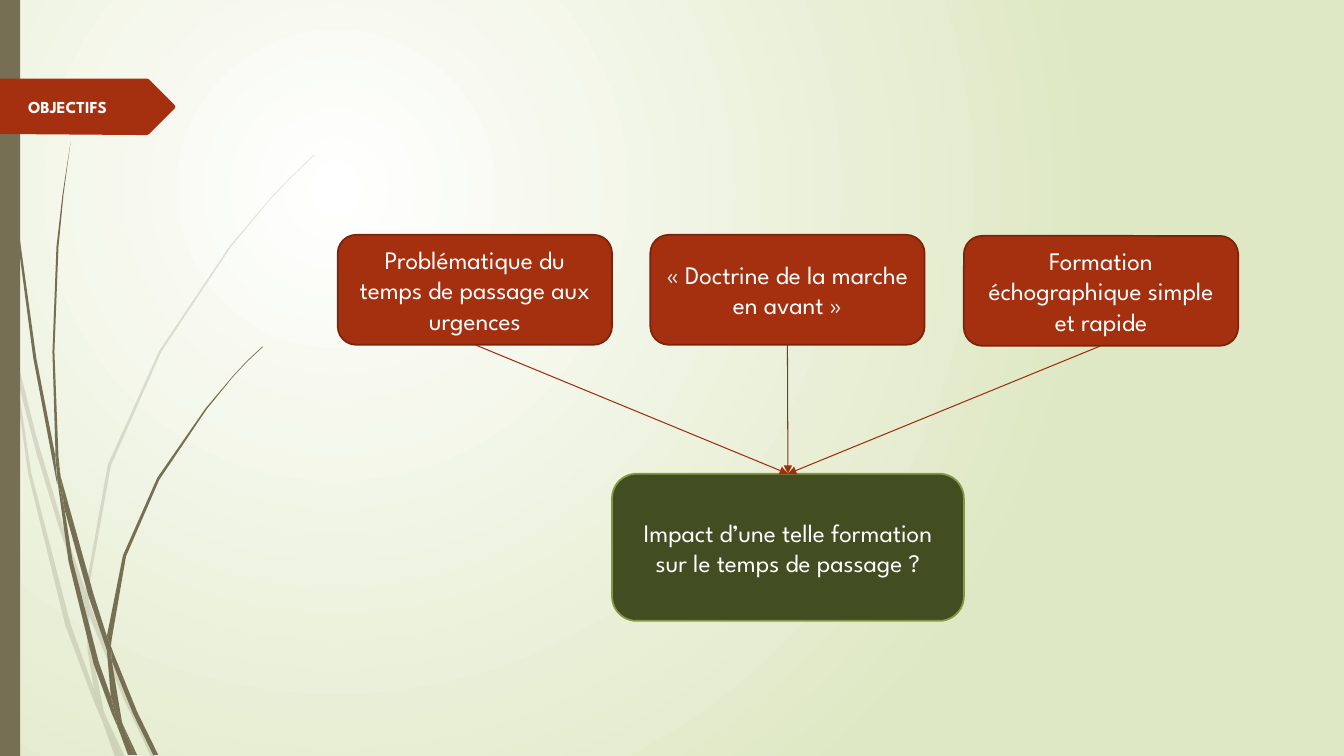
from dataclasses import dataclass

from pptx import Presentation
from pptx.dml.color import RGBColor
from pptx.enum.shapes import MSO_CONNECTOR as Connector, MSO_SHAPE as Shape
from pptx.enum.text import MSO_ANCHOR as Anchor, PP_ALIGN as Align
from pptx.oxml import parse_xml
from pptx.oxml.ns import nsdecls, qn
from pptx.oxml.xmlchemy import OxmlElement
from pptx.shapes.autoshape import Shape as AutoShape
from pptx.slide import Slide
from pptx.util import Pt

PX = 9144  # EMU per px, 100 px to the inch
SLIDE_W, SLIDE_H = 1333, 750
FONT = "League Spartan"
COLORS = {
    "white": "FFFFFF",
    "pale_green": "DFE8C4",
    "taupe": "766F54",
    "red": "A53010",
    "dark_red": "7A240C",
    "arrow_red": "9E2E0F",
    "dark_green": "424D22",
    "green": "839943",
}
BOTTOM_SITE, TOP_SITE = 2, 0

Outline = list[tuple[int, int]]

FAINT_GRASS: list[Outline] = [
    [(11, 350), (9, 322), (0, 282), (0, 299), (10, 344)],
    [(58, 522), (84, 599), (85, 586), (62, 520), (36, 433), (14, 345), (17, 376), (36, 449)],
    [(92, 607), (88, 596), (88, 610), (123, 694), (150, 751), (155, 751), (127, 692)],
    [(119, 751), (124, 751), (105, 711)],
    [(93, 683), (70, 619), (31, 469), (17, 376), (11, 350), (28, 470), (65, 621),
     (92, 693), (101, 714), (99, 707)],
    [(84, 599), (87, 646), (93, 683), (96, 692), (105, 711), (103, 706), (91, 646),
     (88, 610), (88, 608)],
    [(88, 584), (110, 462), (160, 349), (229, 245), (268, 198), (290, 175), (312, 154),
     (312, 153), (289, 175), (268, 197), (228, 244), (158, 348), (107, 461), (85, 584),
     (85, 586), (88, 596)],
    [(101, 714), (114, 751), (119, 751)],
    [(88, 608), (88, 610), (88, 596), (85, 586), (84, 599)],
    [(96, 692), (93, 683), (99, 707), (101, 714), (119, 751), (105, 711)],
]
SOLID_GRASS: list[Outline] = [
    [(7, 110), (17, 233), (33, 355), (56, 477), (57, 481), (55, 457), (55, 453), (36, 355),
     (19, 232), (8, 109), (5, 48), (4, 0), (3, 0), (4, 48)],
    [(88, 592), (106, 645), (106, 633), (106, 631), (93, 590), (60, 472), (64, 505)],
    [(113, 649), (110, 641), (111, 656), (132, 708), (152, 749), (157, 749), (136, 706)],
    [(110, 691), (98, 657), (72, 556), (64, 505), (57, 477), (68, 557), (93, 659),
     (111, 708), (117, 722), (116, 717)],
    [(60, 472), (58, 453), (54, 349), (58, 245), (63, 193), (70, 141), (62, 193),
     (56, 245), (52, 349), (55, 449)],
    [(133, 749), (136, 749), (122, 719)],
    [(57, 477), (64, 505), (60, 472), (55, 449), (55, 453)],
    [(111, 633), (125, 552), (158, 476), (205, 406), (231, 374), (245, 359), (261, 344),
     (260, 344), (245, 358), (231, 373), (204, 405), (156, 474), (122, 551), (106, 631),
     (110, 641)],
    [(117, 722), (127, 749), (131, 749)],
    [(106, 645), (110, 691), (116, 706), (122, 719), (121, 716), (111, 656), (109, 651)],
    [(106, 645), (109, 651), (111, 656), (110, 641), (106, 631), (106, 633)],
    [(116, 706), (110, 691), (116, 717), (117, 722), (130, 749), (133, 749), (122, 719)],
]
TITLE_TAG: Outline = [
    (0, 78), (146, 78), (148, 79), (173, 104), (174, 106), (173, 108), (148, 133),
    (146, 134), (136, 134), (0, 133),
]


@dataclass(frozen=True)
class Box:
    text: str
    left: int
    top: int
    width: int = 272
    height: int = 109
    fill: str = "red"
    line: str = "dark_red"


REASONS = [
    Box("Problématique du temps de passage aux urgences", 335, 233),
    Box("« Doctrine de la marche en avant »", 645, 233),
    Box("Formation échographique simple et rapide", 956, 234),
]
QUESTION = Box("Impact d’une telle formation sur le temps de passage ?",
               607, 470, 349, 146, "dark_green", "green")


def rgb(name: str) -> RGBColor:
    return RGBColor.from_string(COLORS[name])


def paint_background(slide: Slide) -> None:
    """Radial gradient centred in the upper left quarter."""
    fill = slide.background.fill
    fill.gradient()
    for stop, position, color in zip(fill.gradient_stops, (0, 1), ("white", "pale_green")):
        stop.position = position
        stop.color.rgb = rgb(color)
    linear = slide.element.find(".//" + qn("a:lin"))
    circle = parse_xml(
        f'<a:path {nsdecls("a")} path="circle">'
        '<a:fillToRect l="50000" t="50000" r="100000" b="100000"/></a:path>')
    linear.getparent().replace(linear, circle)


def fill_plain(shape: AutoShape, color: str) -> None:
    shape.shadow.inherit = False
    shape.fill.solid()
    shape.fill.fore_color.rgb = rgb(color)
    shape.line.fill.background()


def add_outline(slide: Slide, points: Outline, color: str, opacity: int = 100) -> None:
    builder = slide.shapes.build_freeform(*points[0], scale=PX)
    builder.add_line_segments(points[1:], close=True)
    outline = builder.convert_to_shape()
    fill_plain(outline, color)
    if opacity < 100:
        alpha = OxmlElement("a:alpha")
        alpha.set("val", str(opacity * 1000))
        outline.element.spPr.find(".//" + qn("a:srgbClr")).append(alpha)


def write(shape: AutoShape, text: str, size: int, align: Align, bold: bool = False) -> None:
    shape.text_frame.word_wrap = True
    paragraph = shape.text_frame.paragraphs[0]
    paragraph.text = text
    paragraph.alignment = align
    font = paragraph.font
    font.name, font.size, font.bold = FONT, Pt(size), bold
    font.color.rgb = rgb("white")


def add_box(slide: Slide, box: Box) -> AutoShape:
    shape = slide.shapes.add_shape(Shape.ROUNDED_RECTANGLE, box.left * PX, box.top * PX,
                                   box.width * PX, box.height * PX)
    fill_plain(shape, box.fill)
    shape.line.color.rgb = rgb(box.line)
    shape.line.width = Pt(1.25)
    shape.text_frame.vertical_anchor = Anchor.MIDDLE
    write(shape, box.text, 18, Align.CENTER)
    return shape


def add_arrow(slide: Slide, source: AutoShape, target: AutoShape) -> None:
    arrow = slide.shapes.add_connector(Connector.STRAIGHT, 0, 0, 0, 0)
    arrow.begin_connect(source, BOTTOM_SITE)
    arrow.end_connect(target, TOP_SITE)
    arrow.line.color.rgb = rgb("arrow_red")
    arrow.line.width = Pt(0.75)
    head = OxmlElement("a:tailEnd")
    head.set("type", "triangle")
    arrow.line._get_or_add_ln().append(head)
    arrow.element.spPr.append(OxmlElement("a:effectLst"))


def main() -> None:
    deck = Presentation()
    deck.slide_width, deck.slide_height = SLIDE_W * PX, SLIDE_H * PX
    slide = deck.slides.add_slide(deck.slide_layouts[6])
    paint_background(slide)

    for blade in FAINT_GRASS:
        add_outline(slide, blade, "taupe", opacity=20)
    for blade in SOLID_GRASS:
        add_outline(slide, blade, "taupe")
    side_bar = slide.shapes.add_shape(Shape.RECTANGLE, 0, 0, 20 * PX, SLIDE_H * PX)
    fill_plain(side_bar, "taupe")
    add_outline(slide, TITLE_TAG, "red")

    reasons = [add_box(slide, reason) for reason in REASONS]
    question = add_box(slide, QUESTION)
    for reason in reasons:
        add_arrow(slide, reason, question)

    title = slide.shapes.add_textbox(18 * PX, 91 * PX, 147 * PX, 29 * PX)
    write(title, "OBJECTIFS", 12, Align.LEFT, bold=True)
    deck.save("out.pptx")


if __name__ == "__main__":
    main()
